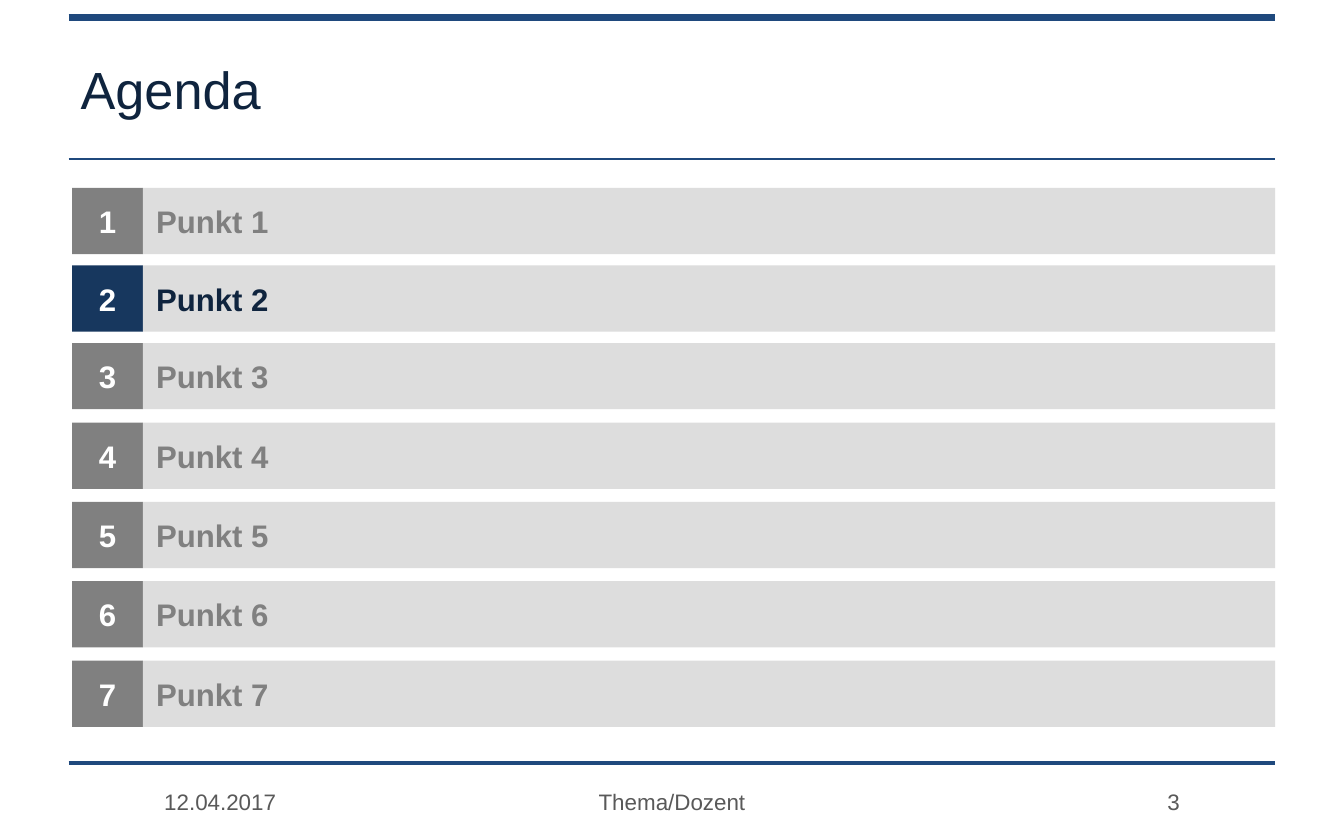
"""Build the agenda slide with its second point highlighted."""
from pptx import Presentation
from pptx.dml.color import RGBColor
from pptx.enum import shapes, text
from pptx.oxml.ns import qn
from pptx.util import Pt

FONT = "Arial"
NAVY, BLUE, DARK = "0F243E", "1F497D", "17375E"
GRAY, PALE, WHITE, SLATE = "808080", "DDDDDD", "FFFFFF", "595959"
LEFT, MID, RIGHT = text.PP_ALIGN.LEFT, text.PP_ALIGN.CENTER, text.PP_ALIGN.RIGHT

TITLE = "Agenda"
POINTS = [f"Punkt {n}" for n in range(1, 8)]
ACTIVE = 2
RULES = [(9.5, 4), (85, 1), (408.75, 2.5)]
FOOT = [
    ("12.04.2017", 88, 129.6, LEFT),
    ("Thema/Dozent", 218.2, 283.6, MID),
    ("3", 502.4, 129.6, RIGHT),
]
EDGE, END = 36.8, 683.2
ROW_X, ROW_H, NUM_W = 38.6, 35.5, 38
TOPS = [100.7 + 41.55 * i for i in range(3)] + [226.4 + 42.5 * i for i in range(4)]


def color(code):
    return RGBColor.from_string(code)


def write(shape, words, size, ink, align, bold=False):
    frame = shape.text_frame
    frame.text = words
    frame.word_wrap = True
    frame.auto_size = text.MSO_AUTO_SIZE.NONE
    frame.vertical_anchor = text.MSO_ANCHOR.MIDDLE
    para = frame.paragraphs[0]
    para.alignment = align
    font = para.runs[0].font
    font.name, font.size, font.bold = FONT, Pt(size), bold
    font.color.rgb = color(ink)


def place(shape, x, y, w, h):
    shape.left, shape.top, shape.width, shape.height = map(Pt, (x, y, w, h))


def add_rule(slide, y, width):
    line = slide.shapes.add_connector(
        shapes.MSO_CONNECTOR.STRAIGHT, Pt(EDGE), Pt(y), Pt(END), Pt(y))
    line.line.color.rgb = color(BLUE)
    line.line.width = Pt(width)
    props = line._element.spPr
    props.append(props.makeelement(qn("a:effectLst"), {}))


def add_bar(slide, x, y, w, fill, words, ink, align):
    bar = slide.shapes.add_shape(
        shapes.MSO_SHAPE.RECTANGLE, Pt(x), Pt(y), Pt(w), Pt(ROW_H))
    bar.shadow.inherit = False
    bar.fill.solid()
    bar.fill.fore_color.rgb = color(fill)
    bar.line.fill.background()
    write(bar, words, 16.7, ink, align, True)


def add_foot(slide, words, x, w, align):
    box = slide.shapes.add_textbox(Pt(x), Pt(412.8), Pt(w), Pt(33))
    frame = box.text_frame
    frame.margin_left = frame.margin_right = 0
    frame.margin_top = frame.margin_bottom = 0
    write(box, words, 12, SLATE, align)


def main():
    deck = Presentation()
    deck.slide_width, deck.slide_height = Pt(720), Pt(450)
    slide = deck.slides.add_slide(deck.slide_layouts[5])
    for y, width in RULES:
        add_rule(slide, y, width)
    title = slide.shapes.title
    place(title, 36, 9.4, 648, 75.6)
    write(title, TITLE, 28, NAVY, LEFT)
    bar_x = ROW_X + NUM_W
    for num, (point, top) in enumerate(zip(POINTS, TOPS), 1):
        fill, ink = (DARK, NAVY) if num == ACTIVE else (GRAY, GRAY)
        add_bar(slide, ROW_X, top, NUM_W, fill, str(num), WHITE, MID)
        add_bar(slide, bar_x, top, END - bar_x, PALE, point, ink, LEFT)
    for part in FOOT:
        add_foot(slide, *part)
    deck.save("out.pptx")


if __name__ == "__main__":
    main()
